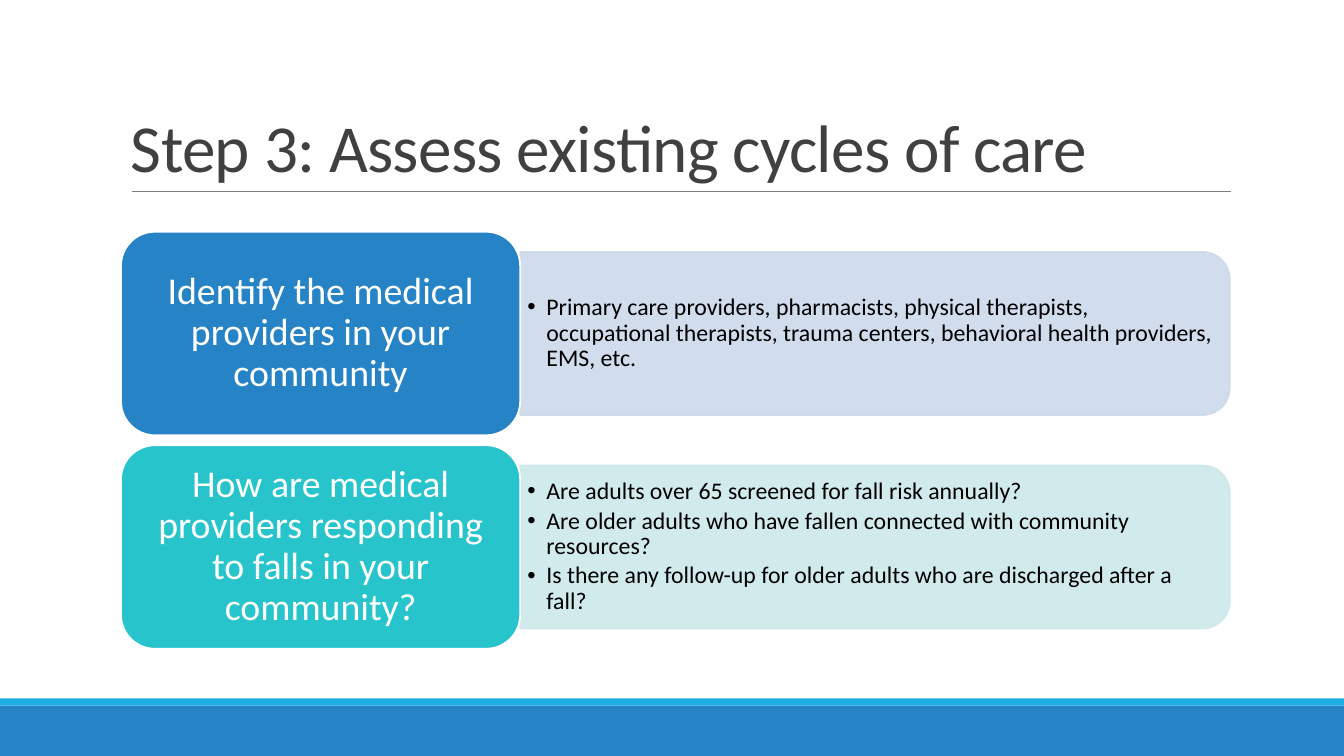
import dataclasses

import lxml.etree
import pptx
import pptx.dml.color
import pptx.enum.shapes
import pptx.enum.text
import pptx.oxml.ns
import pptx.util

Cm = pptx.util.Cm
Pt = pptx.util.Pt
Geometry = pptx.enum.shapes.MSO_SHAPE
Anchor = pptx.enum.text.MSO_ANCHOR
Align = pptx.enum.text.PP_ALIGN
qn = pptx.oxml.ns.qn

SLIDE_WIDTH, SLIDE_HEIGHT = 33.87, 19.05
STEP_LEFT, STEP_TOP, STEP_PITCH = 3.05, 5.84, 5.38
TILE_WIDTH, TILE_HEIGHT = 10.06, 5.13
PANEL_WIDTH, PANEL_HEIGHT = 17.88, 4.11
LIST_WIDTH, LIST_HEIGHT = 17.68, 3.71
PANEL_ALPHA = 90


@dataclasses.dataclass(frozen=True)
class Step:
    heading: str
    points: tuple[str, ...]
    tile_color: str
    panel_color: str


@dataclasses.dataclass(frozen=True)
class Band:
    top: float
    height: float
    color: str


STEPS = (
    Step(
        "Identify the medical providers in your community",
        (
            "Primary care providers, pharmacists, physical therapists, "
            "occupational therapists, trauma centers, behavioral health providers, EMS, etc.",
        ),
        "2683C6",
        "CDD9EA",
    ),
    Step(
        "How are medical providers responding to falls in your community?",
        (
            "Are adults over 65 screened for fall risk annually?",
            "Are older adults who have fallen connected with community resources?",
            "Is there any follow-up for older adults who are discharged after a fall?",
        ),
        "28C4CC",
        "CDE9EC",
    ),
)
BANDS = (Band(17.78, 1.27, "2683C6"), Band(17.6, 0.18, "1CADE4"))


def rgb(color: str) -> pptx.dml.color.RGBColor:
    return pptx.dml.color.RGBColor.from_string(color)


def set_alpha(fill_parent, percent: int) -> None:
    srgb = fill_parent.find(qn("a:solidFill")).find(qn("a:srgbClr"))
    lxml.etree.SubElement(srgb, qn("a:alpha"), val=str(percent * 1000))


def place(shape, left: float, top: float, width: float, height: float) -> None:
    shape.left, shape.top = Cm(left), Cm(top)
    shape.width, shape.height = Cm(width), Cm(height)


def write(shape, *texts: str, size: float, color: str, align=Align.LEFT,
          anchor=Anchor.MIDDLE, line_spacing: float = 0.9, space_after: float = 0,
          insets: tuple[float, float] = (0.25, 0.13), bullet_indent: float = 0,
          tracking: int = 0) -> None:
    frame = shape.text_frame
    frame.word_wrap = True
    frame.auto_size = pptx.enum.text.MSO_AUTO_SIZE.NONE
    frame.vertical_anchor = anchor
    frame.margin_left = frame.margin_right = Cm(insets[0])
    frame.margin_top = frame.margin_bottom = Cm(insets[1])
    frame.text = "\n".join(texts)
    for paragraph in frame.paragraphs:
        paragraph.alignment = align
        paragraph.line_spacing = line_spacing
        paragraph.space_before = Pt(0)
        paragraph.space_after = Pt(space_after)
        if bullet_indent:
            properties = paragraph._p.get_or_add_pPr()
            properties.set("marL", str(Cm(bullet_indent)))
            properties.set("indent", str(-Cm(bullet_indent)))
            lxml.etree.SubElement(properties, qn("a:buChar"), char="•")
        for run in paragraph.runs:
            run.font.name = "Calibri"
            run.font.size = Pt(size)
            run.font.color.rgb = rgb(color)
            if tracking:
                run._r.get_or_add_rPr().set("spc", str(tracking))


def add_block(slide, geometry, left: float, top: float, width: float,
              height: float, fill: str, outline: str = ""):
    block = slide.shapes.add_shape(geometry, Cm(left), Cm(top), Cm(width), Cm(height))
    block.shadow.inherit = False
    block.fill.solid()
    block.fill.fore_color.rgb = rgb(fill)
    if outline:
        block.line.color.rgb = rgb(outline)
        block.line.width = Pt(1.25)
    else:
        block.line.fill.background()
    return block


def add_title_rule(slide) -> None:
    rule = slide.shapes.add_connector(
        pptx.enum.shapes.MSO_CONNECTOR.STRAIGHT, Cm(3.33), Cm(4.83), Cm(31.01), Cm(4.83))
    rule.line.color.rgb = rgb("808080")
    rule.line.width = Pt(0.5)
    lxml.etree.SubElement(rule._element.spPr, qn("a:effectLst"))


def add_step(slide, step: Step, top: float, points_list) -> None:
    middle = top + TILE_HEIGHT / 2
    panel_left = STEP_LEFT + TILE_WIDTH
    panel = add_block(
        slide, Geometry.ROUND_2_SAME_RECTANGLE,
        panel_left + (PANEL_WIDTH - PANEL_HEIGHT) / 2, middle - PANEL_WIDTH / 2,
        PANEL_HEIGHT, PANEL_WIDTH, step.panel_color, step.panel_color)
    panel.rotation = 90
    properties = panel._element.spPr
    set_alpha(properties, PANEL_ALPHA)
    set_alpha(properties.find(qn("a:ln")), PANEL_ALPHA)

    slide.shapes._spTree.append(points_list._element)
    place(points_list, panel_left, middle - LIST_HEIGHT / 2, LIST_WIDTH, LIST_HEIGHT)
    write(points_list, *step.points, size=17, color="000000", space_after=2.5,
          insets=(0.18, 0.1), bullet_indent=0.48)

    tile = add_block(slide, Geometry.ROUNDED_RECTANGLE, STEP_LEFT, top,
                     TILE_WIDTH, TILE_HEIGHT, step.tile_color, "FFFFFF")
    write(tile, step.heading, size=27, color="FFFFFF", align=Align.CENTER,
          insets=(0.28, 0.15))


def main() -> None:
    deck = pptx.Presentation()
    deck.slide_width, deck.slide_height = Cm(SLIDE_WIDTH), Cm(SLIDE_HEIGHT)
    slide = deck.slides.add_slide(deck.slide_layouts.get_by_name("Two Content"))
    title, *points_lists = slide.placeholders

    for band in BANDS:
        add_block(slide, Geometry.RECTANGLE, 0, band.top, SLIDE_WIDTH, band.height, band.color)
    add_title_rule(slide)

    place(title, 3.05, 0.79, 27.94, 4.04)
    write(title, "Step 3: Assess existing cycles of care", size=48, color="404040",
          anchor=Anchor.BOTTOM, line_spacing=0.85, tracking=-50)

    for index, (step, points_list) in enumerate(zip(STEPS, points_lists)):
        add_step(slide, step, STEP_TOP + index * STEP_PITCH, points_list)
    deck.save("out.pptx")


if __name__ == "__main__":
    main()
